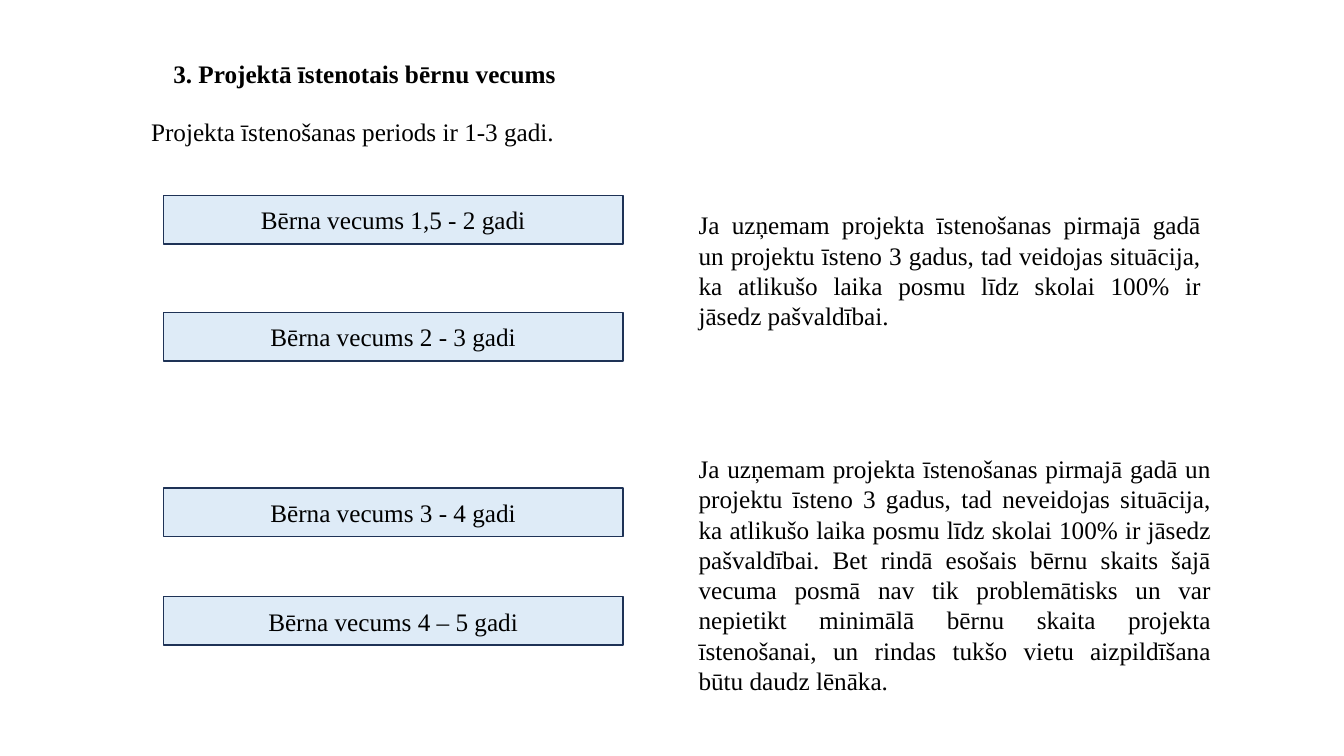
"""Build the slide on children's ages in the project."""
from dataclasses import dataclass

from pptx import Presentation
from pptx import util as u
from pptx.dml.color import RGBColor
from pptx.enum import shapes, text

PX = u.Inches(1) // 100


@dataclass(frozen=True)
class Theme:
    font: str = "Times New Roman"
    size: int = 18
    ink: str = "000000"
    box_fill: str = "DEEBF7"
    box_line: str = "1E3256"
    line_width: int = 1


@dataclass(frozen=True)
class Passage:
    content: str
    left: int
    top: int
    width: int
    height: int
    align: text.PP_ALIGN = text.PP_ALIGN.LEFT
    bold: bool = False


@dataclass(frozen=True)
class AgeBox:
    content: str
    top: int
    left: int = 162
    width: int = 456
    height: int = 48


THEME = Theme()

PASSAGES = [
    Passage("3. Projektā īstenotais bērnu vecums", 162, 53, 1058, 40, bold=True),
    Passage("Projekta īstenošanas periods ir 1-3 gadi.", 140, 110, 1053, 40),
    Passage(
        "Ja uzņemam projekta īstenošanas pirmajā gadā un projektu īsteno 3 gadus, "
        "tad veidojas situācija, ka atlikušo laika posmu līdz skolai 100% ir "
        "jāsedz pašvaldībai.",
        683, 203, 518, 131, text.PP_ALIGN.JUSTIFY,
    ),
    Passage(
        "Ja uzņemam projekta īstenošanas pirmajā gadā un projektu īsteno 3 gadus, "
        "tad neveidojas situācija, ka atlikušo laika posmu līdz skolai 100% ir "
        "jāsedz pašvaldībai. Bet rindā esošais bērnu skaits šajā vecuma posmā nav "
        "tik problemātisks un var nepietikt minimālā bērnu skaita projekta "
        "īstenošanai, un rindas tukšo vietu aizpildīšana būtu daudz lēnāka.",
        683, 445, 528, 252, text.PP_ALIGN.JUSTIFY,
    ),
]

AGE_BOXES = [
    AgeBox("Bērna vecums 1,5 - 2 gadi", 194),
    AgeBox("Bērna vecums 2 - 3 gadi", 310),
    AgeBox("Bērna vecums 3 - 4 gadi", 484),
    AgeBox("Bērna vecums 4 – 5 gadi", 592),
]


def frame(item: Passage | AgeBox) -> list[int]:
    """Return left, top, width and height in EMU."""
    return [side * PX for side in (item.left, item.top, item.width, item.height)]


def write(shape, content: str, *, align: text.PP_ALIGN, bold: bool = False,
          anchor: text.MSO_ANCHOR = text.MSO_ANCHOR.TOP) -> None:
    """Put formatted text into a shape."""
    text_frame = shape.text_frame
    text_frame.word_wrap = True
    text_frame.vertical_anchor = anchor
    paragraph = text_frame.paragraphs[0]
    paragraph.alignment = align
    run = paragraph.add_run()
    run.text = content
    run.font.name = THEME.font
    run.font.size = u.Pt(THEME.size)
    run.font.bold = bold
    run.font.color.rgb = RGBColor.from_string(THEME.ink)


def draw_passage(slide, passage: Passage) -> None:
    """Draw a text box that grows with its text."""
    shape = slide.shapes.add_textbox(*frame(passage))
    write(shape, passage.content, align=passage.align, bold=passage.bold)
    shape.text_frame.auto_size = text.MSO_AUTO_SIZE.SHAPE_TO_FIT_TEXT


def draw_age_box(slide, box: AgeBox) -> None:
    """Draw an outlined rectangle with a centred age range."""
    shape = slide.shapes.add_shape(shapes.MSO_SHAPE.RECTANGLE, *frame(box))
    shape.shadow.inherit = False
    shape.fill.solid()
    shape.fill.fore_color.rgb = RGBColor.from_string(THEME.box_fill)
    shape.line.color.rgb = RGBColor.from_string(THEME.box_line)
    shape.line.width = u.Pt(THEME.line_width)
    write(shape, box.content, align=text.PP_ALIGN.CENTER,
          anchor=text.MSO_ANCHOR.MIDDLE)


def main() -> None:
    """Build and save the presentation."""
    presentation = Presentation()
    presentation.slide_width = 1333 * PX
    presentation.slide_height = 750 * PX
    slide = presentation.slides.add_slide(presentation.slide_layouts[6])
    for passage in PASSAGES:
        draw_passage(slide, passage)
    for box in AGE_BOXES:
        draw_age_box(slide, box)
    presentation.save("out.pptx")


if __name__ == "__main__":
    main()
